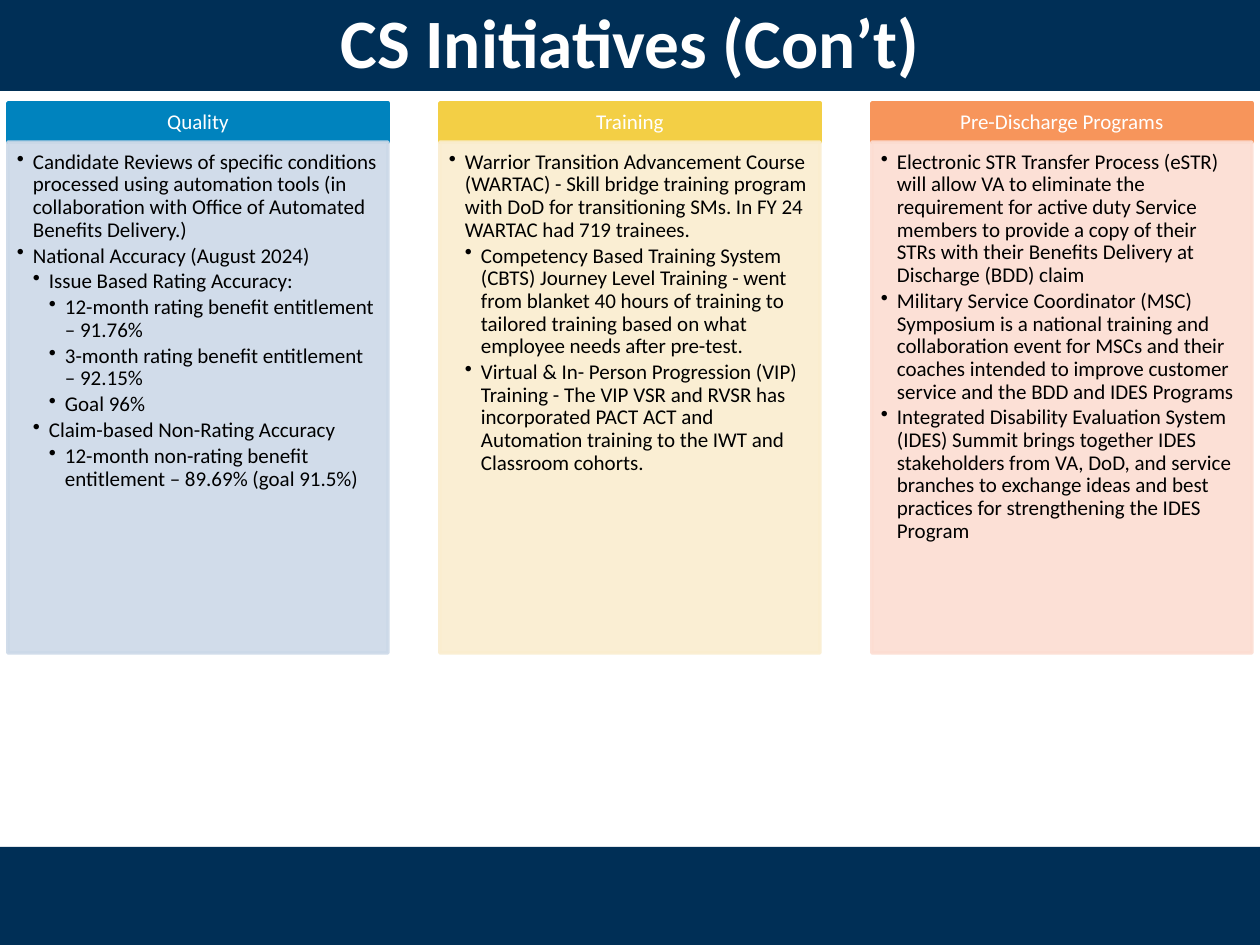
from lxml import etree
from pptx import Presentation
from pptx import util as u
from pptx.dml.color import RGBColor
from pptx.enum import shapes, text
from pptx.oxml.ns import qn

SCALE = 914400 / 126
NAVY, WHITE, BLACK = "002F56", "FFFFFF", "000000"


def px(length):
    return u.Emu(round(length * SCALE))


def paint(color_format, color, opacity=100):
    color_format.rgb = RGBColor.from_string(color)
    if opacity < 100:
        for node in color_format._xFill.iter(qn("a:srgbClr")):
            etree.SubElement(node, qn("a:alpha")).set("val", str(opacity * 1000))


columns = [
    ("Quality", "0083BE", "CCD9E8", [
        (1, "Candidate Reviews of specific conditions processed using automation tools "
            "(in collaboration with Office of Automated Benefits Delivery.)"),
        (1, "National Accuracy (August 2024)"),
        (2, "Issue Based Rating Accuracy:"),
        (3, "12-month rating benefit entitlement – 91.76%"),
        (3, "3-month rating benefit entitlement – 92.15%"),
        (3, "Goal 96%"),
        (2, "Claim-based Non-Rating Accuracy"),
        (3, "12-month non-rating benefit entitlement – 89.69% (goal 91.5%)"),
    ]),
    ("Training", "F3CF45", "FAEDCF", [
        (1, "Warrior Transition Advancement Course (WARTAC) - Skill bridge training program "
            "with DoD for transitioning SMs. In FY 24 WARTAC had 719 trainees."),
        (2, "Competency Based Training System (CBTS) Journey Level Training - went from "
            "blanket 40 hours of training to tailored training based on what employee "
            "needs after pre-test."),
        (2, "Virtual & In- Person Progression (VIP) Training - The VIP VSR and RVSR has "
            "incorporated PACT ACT and Automation training to the IWT and Classroom cohorts."),
    ]),
    ("Pre-Discharge Programs", "F7955B", "FCDDD2", [
        (1, "Electronic STR Transfer Process (eSTR) will allow VA to eliminate the requirement "
            "for active duty Service members to provide a copy of their STRs with their "
            "Benefits Delivery at Discharge (BDD) claim"),
        (1, "Military Service Coordinator (MSC) Symposium is a national training and "
            "collaboration event for MSCs and their coaches intended to improve customer "
            "service and the BDD and IDES Programs"),
        (1, "Integrated Disability Evaluation System (IDES) Summit brings together IDES "
            "stakeholders from VA, DoD, and service branches to exchange ideas and best "
            "practices for strengthening the IDES Program"),
    ]),
]

presentation = Presentation()
presentation.slide_width, presentation.slide_height = px(1260), px(945)
slide = presentation.slides.add_slide(presentation.slide_layouts[5])

title = slide.shapes.title
title.left, title.top, title.width, title.height = px(0), px(-10), px(1260), px(101)
title.fill.solid()
paint(title.fill.fore_color, NAVY)
title.text_frame.text = "CS Initiatives (Con’t)"
title.text_frame.auto_size = text.MSO_AUTO_SIZE.NONE
title.text_frame.vertical_anchor = text.MSO_ANCHOR.MIDDLE
heading = title.text_frame.paragraphs[0]
heading.alignment = text.PP_ALIGN.CENTER
heading_font = heading.runs[0].font
heading_font.name, heading_font.size, heading_font.bold = "Calibri", u.Pt(39.6), True
paint(heading_font.color, WHITE)

footer_bar = slide.shapes.add_shape(
    shapes.MSO_SHAPE.RECTANGLE, px(0), px(847), px(1260), px(101))
footer_bar.shadow.inherit = False
footer_bar.fill.solid()
paint(footer_bar.fill.fore_color, NAVY)
footer_bar.line.fill.background()

for index, (name, header_color, body_color, bullets) in enumerate(columns):
    left = 8 + index * 432
    panels = [
        (103, 39, header_color, 100, WHITE, [(0, name)]),
        (142, 511, body_color, 90, BLACK, bullets),
    ]
    for top, height, color, opacity, text_color, items in panels:
        panel = slide.shapes.add_shape(
            shapes.MSO_SHAPE.RECTANGLE, px(left), px(top), px(380), px(height))
        panel.shadow.inherit = False
        panel.fill.solid()
        paint(panel.fill.fore_color, color, opacity)
        panel.line.width = u.Pt(2)
        panel.line.fill.solid()
        paint(panel.line.fill.fore_color, color, opacity)
        frame = panel.text_frame
        frame.word_wrap = True
        frame.vertical_anchor = text.MSO_ANCHOR.MIDDLE
        if items is bullets:
            frame.vertical_anchor = text.MSO_ANCHOR.TOP
            frame.margin_left = frame.margin_top = px(9)
            frame.margin_right, frame.margin_bottom = px(11), px(12)
        frame.text = "\n".join(words for _, words in items)
        for paragraph, (level, _) in zip(frame.paragraphs, items):
            paragraph.alignment = text.PP_ALIGN.LEFT if level else text.PP_ALIGN.CENTER
            paragraph.line_spacing = 0.9
            if level:
                paragraph.level = level
                paragraph.space_after = u.Pt(1.8)
                properties = paragraph._p.get_or_add_pPr()
                properties.set("marL", str(px(16 * level)))
                properties.set("indent", str(px(-16)))
                etree.SubElement(properties, qn("a:buChar")).set("char", "•")
            font = paragraph.runs[0].font
            font.name, font.size = "Calibri", u.Pt(12)
            paint(font.color, text_color)

presentation.save("out.pptx")
